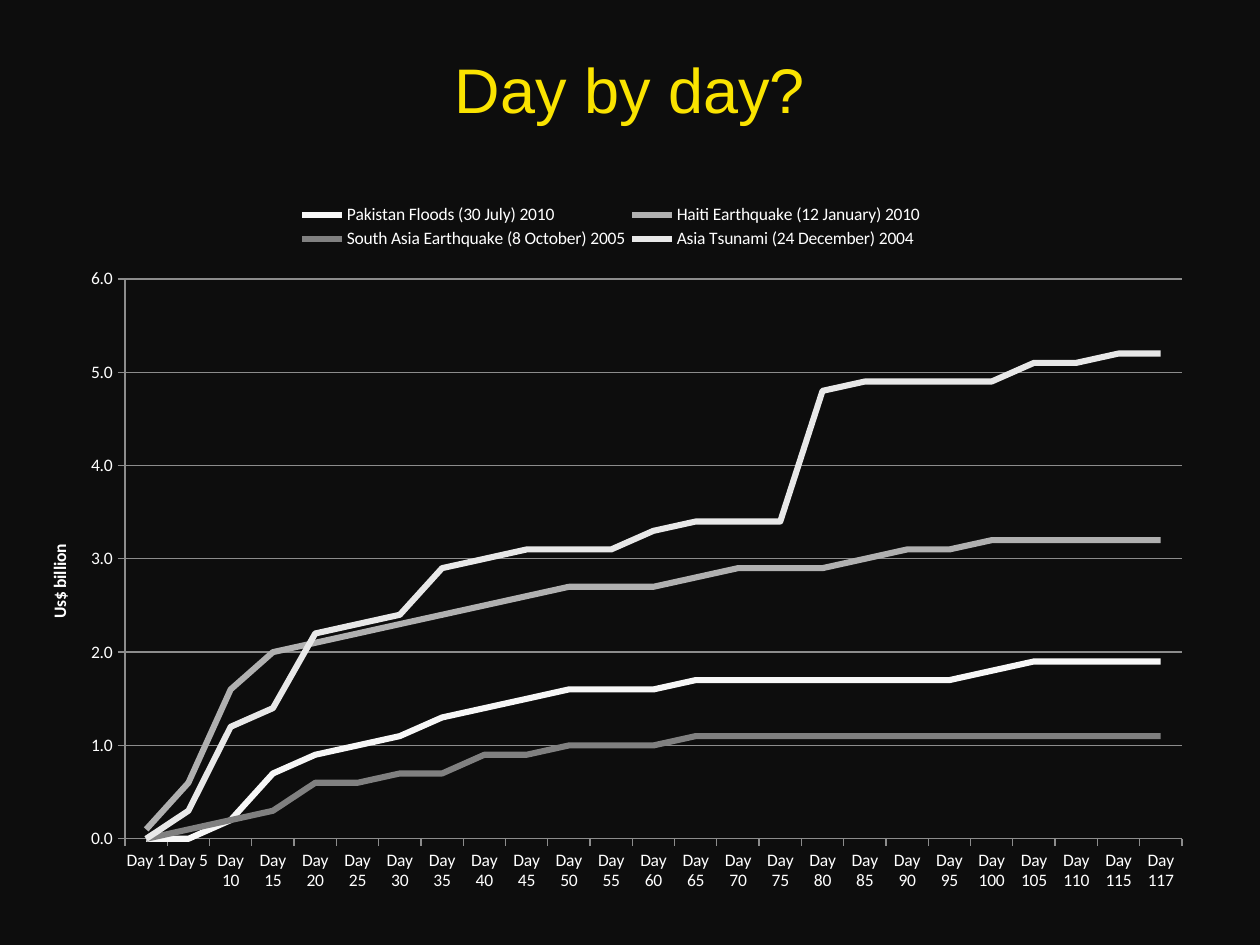
"""Build a slide with a line chart of disaster funding day by day."""
from dataclasses import dataclass

from lxml import etree
from pptx import Presentation
from pptx.chart.data import CategoryChartData
from pptx.dml.color import RGBColor
from pptx.enum.chart import XL_CHART_TYPE, XL_LEGEND_POSITION, XL_TICK_MARK
from pptx.enum.text import MSO_ANCHOR, PP_ALIGN
from pptx.oxml.ns import qn
from pptx.util import Pt

LINE = XL_CHART_TYPE.LINE
TOP = XL_LEGEND_POSITION.TOP
OUTSIDE = XL_TICK_MARK.OUTSIDE
CENTER = PP_ALIGN.CENTER
HIGH = MSO_ANCHOR.TOP

BLACK = RGBColor(0x0D, 0x0D, 0x0D)
YELLOW = RGBColor(0xFA, 0xE3, 0x00)
WHITE = RGBColor(0xFF, 0xFF, 0xFF)
PEARL = RGBColor(0xF7, 0xF7, 0xF7)
SILVER = RGBColor(0xB0, 0xB0, 0xB0)
GRAY = RGBColor(0x80, 0x80, 0x80)
PALE = RGBColor(0xE8, 0xE8, 0xE8)
RULE = RGBColor(0x8C, 0x8C, 0x8C)

SCALE = 914400 / 126


@dataclass
class Box:
    x: int
    y: int
    w: int
    h: int


@dataclass
class Fund:
    name: str
    color: RGBColor
    vals: list[float]


PAGE = Box(0, 0, 1260, 945)
HEAD = Box(0, 38, 1260, 120)
FRAME = Box(15, 192, 1191, 714)
PLOT = Box(125, 279, 1057, 560)
KEY = Box(295, 201, 632, 52)
LABEL = Box(45, 541, 18, 76)

DAYS = [1, *range(5, 116, 5), 117]
FUNDS = [
    Fund("Pakistan Floods (30 July) 2010", PEARL,
         [0, 0, 0.2, 0.7, 0.9, 1, 1.1, 1.3, 1.4, 1.5, 1.6, 1.6, 1.6,
          1.7, 1.7, 1.7, 1.7, 1.7, 1.7, 1.7, 1.8, 1.9, 1.9, 1.9, 1.9]),
    Fund("Haiti Earthquake (12 January) 2010", SILVER,
         [0.1, 0.6, 1.6, 2, 2.1, 2.2, 2.3, 2.4, 2.5, 2.6, 2.7, 2.7, 2.7,
          2.8, 2.9, 2.9, 2.9, 3, 3.1, 3.1, 3.2, 3.2, 3.2, 3.2, 3.2]),
    Fund("South Asia Earthquake (8 October) 2005", GRAY,
         [0, 0.1, 0.2, 0.3, 0.6, 0.6, 0.7, 0.7, 0.9, 0.9, 1, 1, 1,
          1.1, 1.1, 1.1, 1.1, 1.1, 1.1, 1.1, 1.1, 1.1, 1.1, 1.1, 1.1]),
    Fund("Asia Tsunami (24 December) 2004", PALE,
         [0, 0.3, 1.2, 1.4, 2.2, 2.3, 2.4, 2.9, 3, 3.1, 3.1, 3.1, 3.3,
          3.4, 3.4, 3.4, 4.8, 4.9, 4.9, 4.9, 4.9, 5.1, 5.1, 5.2, 5.2]),
]


def px(num: int) -> int:
    return round(num * SCALE)


def edges(box: Box) -> tuple[int, ...]:
    return tuple(px(n) for n in (box.x, box.y, box.w, box.h))


def style(font, size: int, color: RGBColor, face: str, bold: bool = False) -> None:
    font.size = Pt(size)
    font.name = face
    font.bold = bold
    font.color.rgb = color


def place(node, box: Box, index: int, sized: bool = True) -> None:
    for old in node.findall(qn("c:layout")):
        node.remove(old)
    layout = etree.Element(qn("c:layout"))
    node.insert(index, layout)
    manual = etree.SubElement(layout, qn("c:manualLayout"))
    parts = []
    if index == 0:
        parts.append(("layoutTarget", "inner"))
    parts += [("xMode", "edge"), ("yMode", "edge"),
              ("x", round((box.x - FRAME.x) / FRAME.w, 4)),
              ("y", round((box.y - FRAME.y) / FRAME.h, 4))]
    if sized:
        parts += [("w", round(box.w / FRAME.w, 4)),
                  ("h", round(box.h / FRAME.h, 4))]
    for tag, val in parts:
        etree.SubElement(manual, qn(f"c:{tag}")).set("val", str(val))


def rule(line) -> None:
    line.color.rgb = RULE
    line.width = Pt(0.75)


def add_title(slide) -> None:
    frame = slide.shapes.add_textbox(*edges(HEAD)).text_frame
    frame.word_wrap = True
    frame.vertical_anchor = HIGH
    frame.margin_top = px(13)
    para = frame.paragraphs[0]
    para.text = "Day by day?"
    para.alignment = CENTER
    style(para.font, 36, YELLOW, "Arial")


def add_graph(slide) -> None:
    data = CategoryChartData(number_format="0.0")
    data.categories = [f"Day {day}" for day in DAYS]
    for fund in FUNDS:
        data.add_series(fund.name, fund.vals)
    chart = slide.shapes.add_chart(LINE, *edges(FRAME), data).chart
    style(chart.font, 10, WHITE, "Calibri")
    chart.has_title = False
    plot = chart.plots[0]
    plot.vary_by_categories = False
    for line, fund in zip(plot.series, FUNDS):
        line.smooth = False
        line.format.line.color.rgb = fund.color
        line.format.line.width = Pt(3.5)

    chart.has_legend = True
    legend = chart.legend
    legend.position = TOP
    legend.include_in_layout = False
    style(legend.font, 10, WHITE, "Calibri")

    axis = chart.value_axis
    axis.minimum_scale = 0
    axis.maximum_scale = 6
    axis.major_unit = 1
    axis.has_major_gridlines = True
    rule(axis.major_gridlines.format.line)
    axis.tick_labels.number_format = "0.0"
    axis.tick_labels.number_format_is_linked = False
    for side in (axis, chart.category_axis):
        side.major_tick_mark = OUTSIDE
        rule(side.format.line)
        style(side.tick_labels.font, 10, WHITE, "Calibri")
    title = axis.axis_title
    para = title.text_frame.paragraphs[0]
    para.text = "Us$ billion"
    style(para.font, 10, WHITE, "Calibri", True)
    body = title.text_frame._txBody.find(qn("a:bodyPr"))
    body.set("rot", "-5400000")
    body.set("vert", "horz")

    area = chart._chartSpace.find(f".//{qn('c:plotArea')}")
    place(area, PLOT, 0)
    place(legend._element, KEY, 1)
    place(title._element, LABEL, 1, False)


def main() -> None:
    deck = Presentation()
    deck.slide_width = px(PAGE.w)
    deck.slide_height = px(PAGE.h)
    slide = deck.slides.add_slide(deck.slide_layouts[6])
    fill = slide.background.fill
    fill.solid()
    fill.fore_color.rgb = BLACK
    add_graph(slide)
    add_title(slide)
    deck.save("out.pptx")


if __name__ == "__main__":
    main()
